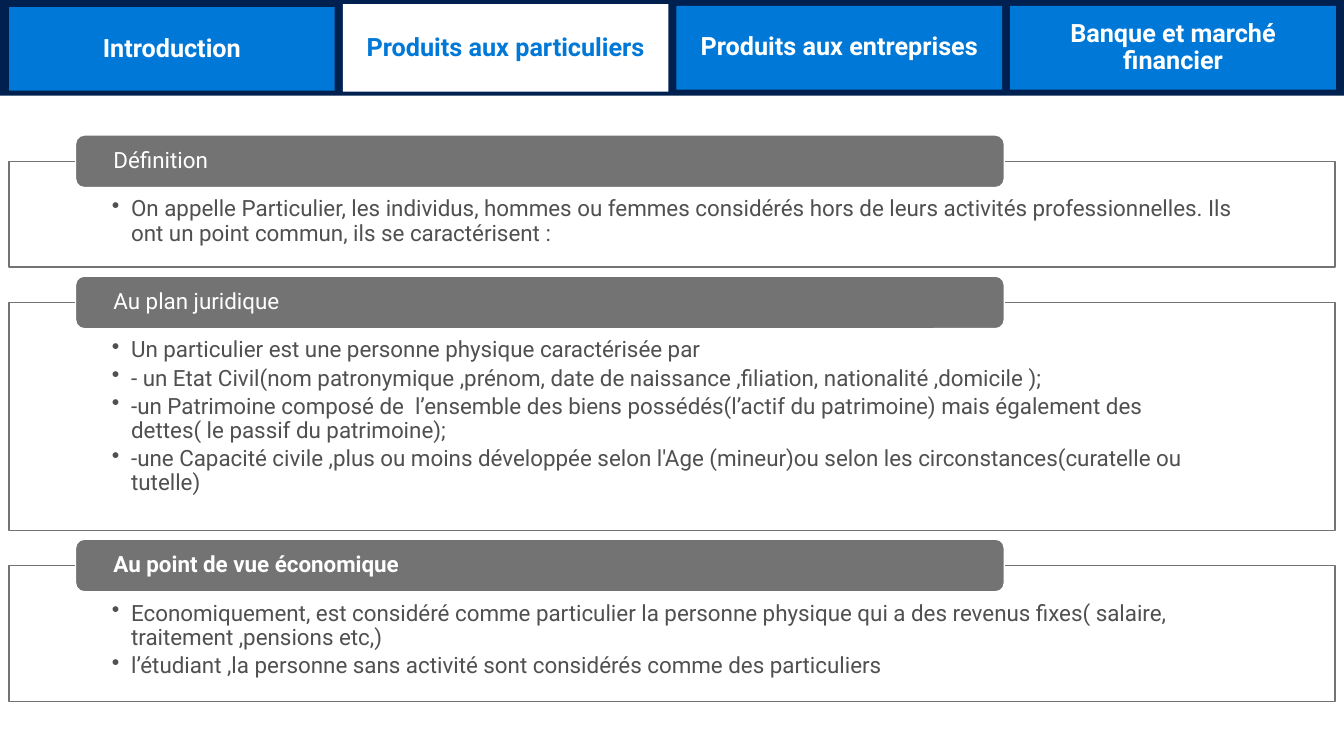
"""Build the slide on retail banking customers: four tabs and three titled panels."""
from lxml import etree
from pptx import Presentation
from pptx.dml.color import RGBColor
from pptx.enum.shapes import MSO_SHAPE
from pptx.enum.text import MSO_ANCHOR, PP_ALIGN
from pptx.oxml.ns import qn
from pptx.util import Inches, Pt

RECT, ROUNDED = MSO_SHAPE.RECTANGLE, MSO_SHAPE.ROUNDED_RECTANGLE
TOP, MIDDLE = MSO_ANCHOR.TOP, MSO_ANCHOR.MIDDLE
LEFT, CENTER = PP_ALIGN.LEFT, PP_ALIGN.CENTER
NAVY = RGBColor(0x00, 0x20, 0x50)
BLUE = RGBColor(0x00, 0x78, 0xD7)
WHITE = RGBColor(0xFF, 0xFF, 0xFF)
GREY = RGBColor(0x73, 0x73, 0x73)
TEXT_GREY = RGBColor(0x50, 0x50, 0x50)

MARGIN = 0.09
TAB_W, TAB_STEP = 3.23, 3.31
PANEL_W = 13.15
HEADER_X, HEADER_W, HEADER_H, HEADER_RISE = 0.75, 9.21, 0.52, 0.26

TABS = [
    ("Introduction", 0.07, 0.83, BLUE, WHITE),
    ("Produits aux particuliers", 0.04, 0.87, WHITE, BLUE),
    ("Produits aux entreprises", 0.06, 0.83, BLUE, WHITE),
    ("Banque et marché financier", 0.06, 0.83, BLUE, WHITE),
]
PANELS = [
    ("Définition", False, 1.6, 1.05, [
        "On appelle Particulier, les individus, hommes ou femmes considérés hors de leurs "
        "activités professionnelles. Ils ont un point commun, ils se caractérisent :",
    ]),
    ("Au plan juridique", False, 3.0, 2.26, [
        "Un particulier est une personne physique caractérisée par",
        "- un Etat Civil(nom patronymique ,prénom, date de naissance ,filiation, "
        "nationalité ,domicile );",
        "-un Patrimoine composé de  l’ensemble des biens possédés(l’actif du patrimoine) "
        "mais également des dettes( le passif du patrimoine);",
        "-une Capacité civile ,plus ou moins développée selon l'Age (mineur)ou selon les "
        "circonstances(curatelle ou tutelle)",
    ]),
    ("Au point de vue économique", True, 5.61, 1.35, [
        "Economiquement, est considéré comme particulier la personne physique qui a des "
        "revenus fixes( salaire, traitement ,pensions etc,)",
        "l’étudiant ,la personne sans activité sont considérés comme des particuliers",
    ]),
]


def add_box(shape, x, y, w, h, fill, line=None):
    sp = s.shapes.add_shape(shape, Inches(x), Inches(y), Inches(w), Inches(h))
    sp.shadow.inherit = False
    sp.fill.solid()
    sp.fill.fore_color.rgb = fill
    if line is None:
        sp.line.fill.background()
    else:
        sp.line.color.rgb = line
        sp.line.width = Pt(0.85)
    return sp


def write(sp, lines, size, color, bold, align, anchor, insets, after=0, bullet=False):
    tf = sp.text_frame
    tf.word_wrap = True
    tf.vertical_anchor = anchor
    tf.margin_left = tf.margin_right = Inches(insets[0])
    tf.margin_top, tf.margin_bottom = Inches(insets[1]), Inches(insets[2])
    tf.text = "\n".join(lines)
    for p in tf.paragraphs:
        p.alignment = align
        p.line_spacing = 0.9
        p.space_after = Pt(after)
        if bullet:
            pPr = p._p.get_or_add_pPr()
            pPr.set("marL", str(Inches(0.19)))
            pPr.set("indent", str(Inches(-0.19)))
            etree.SubElement(pPr, qn("a:buChar")).set("char", "•")
        for r in p.runs:
            r.font.name = "Roboto"
            r.font.size = Pt(size)
            r.font.bold = bold
            r.font.color.rgb = color


prs = Presentation()
prs.slide_width, prs.slide_height = Inches(13.33), Inches(7.5)
s = prs.slides.add_slide(prs.slide_layouts[6])

add_box(RECT, 0, 0, 13.33, 0.95, NAVY)
for i, (label, y, h, fill, color) in enumerate(TABS):
    tab = add_box(RECT, MARGIN + i * TAB_STEP, y, TAB_W, h, fill)
    write(tab, [label], 18, color, True, CENTER, MIDDLE, (0.2, 0.16, 0.16), after=6)

for title, bold, y, h, items in PANELS:
    panel = add_box(RECT, MARGIN, y, PANEL_W, h, WHITE, GREY)
    write(panel, items, 16, TEXT_GREY, False, LEFT, TOP, (1.02, 0.36, 0.12),
          after=2.8, bullet=True)
    header = add_box(ROUNDED, HEADER_X, y - HEADER_RISE, HEADER_W, HEADER_H, GREY, WHITE)
    write(header, [title], 16, WHITE, bold, LEFT, MIDDLE, (0.35, 0, 0))

prs.save("out.pptx")
